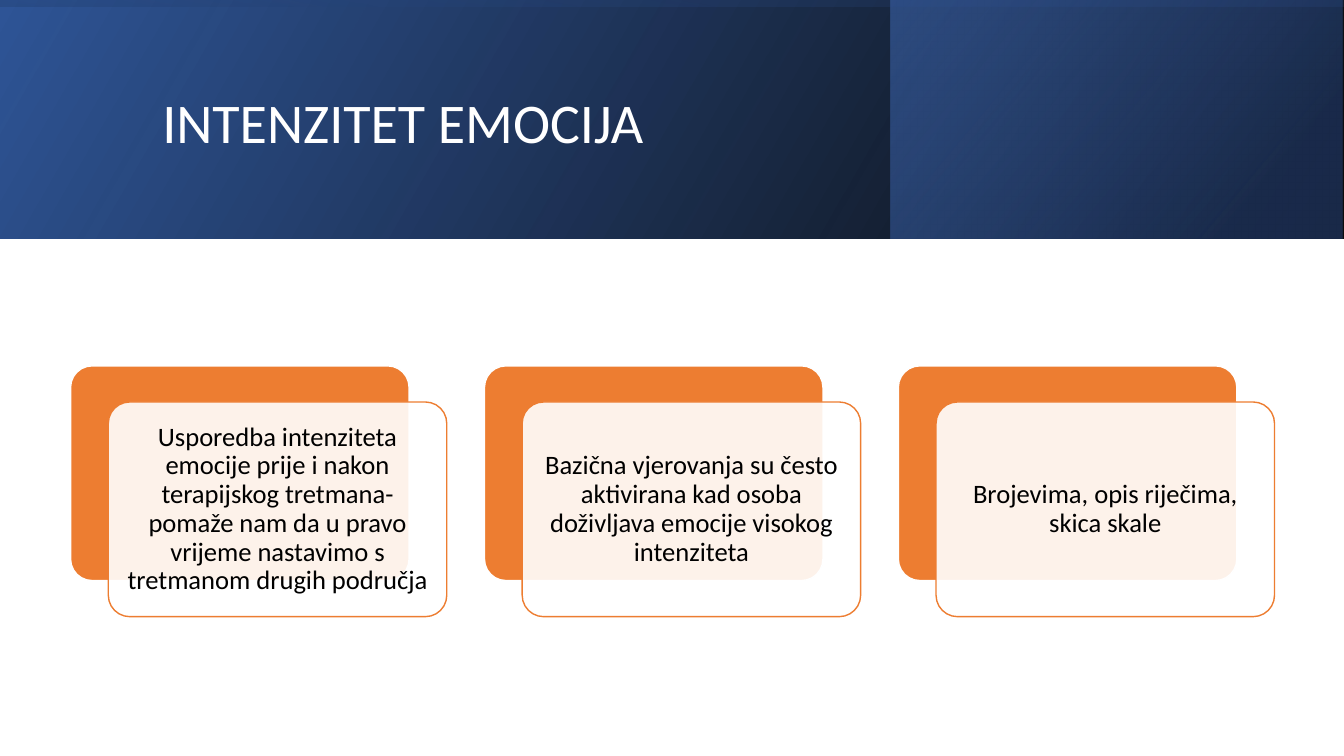
from lxml import etree
from pptx import Presentation
from pptx.dml.color import RGBColor
from pptx.enum.shapes import MSO_SHAPE
from pptx.enum.text import MSO_ANCHOR, PP_ALIGN
from pptx.oxml.ns import qn
from pptx.util import Cm, Pt

RECTANGLE = MSO_SHAPE.RECTANGLE
ROUNDED = MSO_SHAPE.ROUNDED_RECTANGLE
MIDDLE = MSO_ANCHOR.MIDDLE
LEFT, CENTER = PP_ALIGN.LEFT, PP_ALIGN.CENTER

FONT = "Calibri"
WHITE, BLACK, ORANGE = "FFFFFF", "000000", "ED7D31"
PAGE_WIDTH, PAGE_HEIGHT = 33.87, 19.05
HEADER_HEIGHT = 6.02
ROTATED_LEFT = (PAGE_WIDTH - HEADER_HEIGHT) / 2

HEADER_LAYERS = [
    {"place": (0, 0, PAGE_WIDTH, HEADER_HEIGHT), "rotation": 0, "angle": 330,
     "stops": [(0, BLACK, 96), (100, "2F5597", 100)]},
    {"place": (22.45, 0, 11.39, HEADER_HEIGHT), "rotation": 0, "angle": 320,
     "stops": [(19, "203864", 68), (100, "4472C4", 48)]},
    {"place": (ROTATED_LEFT, -ROTATED_LEFT, HEADER_HEIGHT, PAGE_WIDTH),
     "rotation": 270, "angle": 350,
     "stops": [(23, "2F5597", 16), (99, BLACK, 45)]},
]

CARD_LEFT, CARD_TOP, CARD_PITCH = 1.78, 9.22, 10.43
CARD_WIDTH, CARD_HEIGHT = 8.53, 5.41
FRONT_SHIFT_X, FRONT_SHIFT_Y = 0.95, 0.91
TEXT_MARGIN = 0.16
CARD_TEXTS = [
    "Usporedba intenziteta emocije prije i nakon terapijskog tretmana- "
    "pomaže nam da u pravo vrijeme nastavimo s tretmanom drugih područja",
    "Bazična vjerovanja su često aktivirana kad osoba doživljava emocije "
    "visokog intenziteta",
    "Brojevima, opis riječima, skica skale",
]


def color(value):
    return RGBColor.from_string(value)


def set_attributes(target, values):
    for name, value in values.items():
        setattr(target, name, value)


def add_alpha(parent, percent):
    etree.SubElement(parent, qn("a:alpha"), val=str(percent * 1000))


def add_box(page, kind, place):
    box = page.shapes.add_shape(kind, *map(Cm, place))
    box.shadow.inherit = False
    return box


def set_gradient(box, stops, angle):
    box.fill.background()
    blank_fill = box.element.spPr.find(qn("a:noFill"))
    gradient = etree.Element(qn("a:gradFill"))
    stop_list = etree.SubElement(gradient, qn("a:gsLst"))
    for position, value, opacity in stops:
        stop = etree.SubElement(stop_list, qn("a:gs"), pos=str(position * 1000))
        add_alpha(etree.SubElement(stop, qn("a:srgbClr"), val=value), opacity)
    etree.SubElement(gradient, qn("a:lin"), ang=str(angle * 60000), scaled="0")
    box.element.spPr.replace(blank_fill, gradient)


def add_header_layer(page, place, rotation, angle, stops):
    box = add_box(page, RECTANGLE, place)
    box.rotation = rotation
    box.element.spPr.find(qn("a:xfrm")).set("flipH", "1")
    box.line.fill.background()
    set_gradient(box, stops, angle)


def add_panel(page, place, fill, line, opacity=100):
    box = add_box(page, ROUNDED, place)
    box.adjustments[0] = 0.1
    box.fill.solid()
    box.fill.fore_color.rgb = color(fill)
    if opacity < 100:
        add_alpha(box.element.spPr.find(f"{qn('a:solidFill')}/{qn('a:srgbClr')}"), opacity)
    box.line.color.rgb = color(line)
    box.line.width = Pt(1)


def add_text(page, place, text, size, value, alignment, margins):
    frame = page.shapes.add_textbox(*map(Cm, place)).text_frame
    side, top = map(Cm, margins)
    set_attributes(frame, {
        "word_wrap": True, "vertical_anchor": MIDDLE,
        "margin_left": side, "margin_right": side,
        "margin_top": top, "margin_bottom": top,
    })
    para = frame.paragraphs[0]
    set_attributes(para, {"alignment": alignment, "line_spacing": 0.9})
    span = para.add_run()
    span.text = text
    set_attributes(span.font, {"name": FONT, "size": Pt(size)})
    span.font.color.rgb = color(value)


def add_card(page, left, text):
    front_left, front_top = left + FRONT_SHIFT_X, CARD_TOP + FRONT_SHIFT_Y
    add_panel(page, (left, CARD_TOP, CARD_WIDTH, CARD_HEIGHT), ORANGE, WHITE)
    add_panel(page, (front_left, front_top, CARD_WIDTH, CARD_HEIGHT), WHITE, ORANGE, 90)
    text_place = (front_left + TEXT_MARGIN, front_top + TEXT_MARGIN,
                  CARD_WIDTH - 2 * TEXT_MARGIN, CARD_HEIGHT - 2 * TEXT_MARGIN)
    add_text(page, text_place, text, 19, BLACK, CENTER, (0.2, 0.2))


def main():
    deck = Presentation()
    set_attributes(deck, {"slide_width": Cm(PAGE_WIDTH), "slide_height": Cm(PAGE_HEIGHT)})
    page = deck.slides.add_slide(deck.slide_layouts[6])
    for layer in HEADER_LAYERS:
        add_header_layer(page, **layer)
    add_text(page, (3.84, 0.97, 27, 4.37), "INTENZITET EMOCIJA", 40, WHITE, LEFT, (0.25, 0.13))
    for index, text in enumerate(CARD_TEXTS):
        add_card(page, CARD_LEFT + index * CARD_PITCH, text)
    deck.save("out.pptx")


if __name__ == "__main__":
    main()
